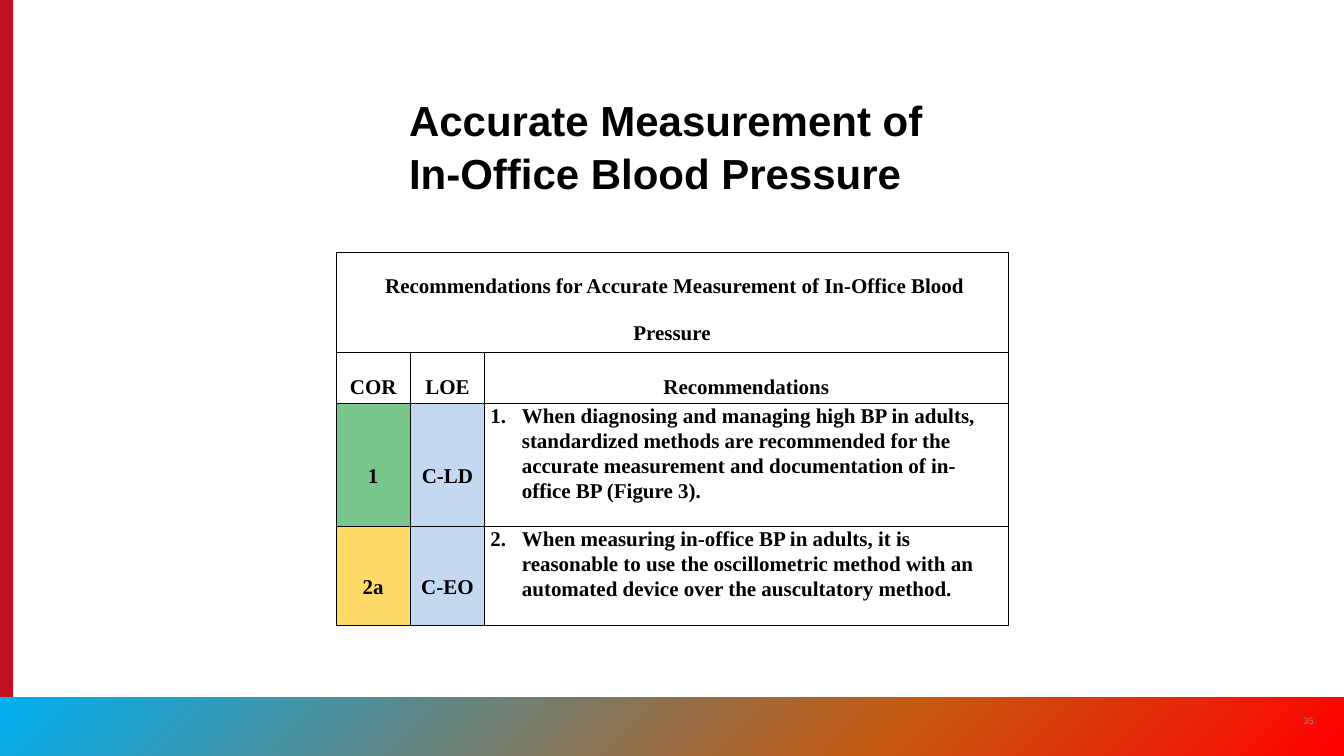
import copy

import pptx
import pptx.dml.color
import pptx.enum.shapes
import pptx.enum.text
import pptx.oxml
import pptx.oxml.ns
import pptx.util

Cm = pptx.util.Cm
Pt = pptx.util.Pt
ALIGN = pptx.enum.text.PP_ALIGN
ANCHOR = pptx.enum.text.MSO_ANCHOR
qn = pptx.oxml.ns.qn

WHITE, BLACK, LEVEL_BLUE = "FFFFFF", "000000", "C4D9F0"
HEADING = " Recommendations for Accurate Measurement of In-Office Blood Pressure"
COLUMN_HEADS = ("COR", "LOE", "Recommendations")
RECOMMENDATIONS = (
    ("1", "79C78D", "C-LD",
     "When diagnosing and managing high BP in adults, standardized methods are "
     "recommended for the accurate measurement and documentation of in-office BP "
     "(Figure 3)."),
    ("2a", "FFDA68", "C-EO",
     "When measuring in-office BP in adults, it is reasonable to use the "
     "oscillometric method with an automated device over the auscultatory method."),
)
COLUMN_WIDTHS = (2.25, 2.24, 15.83)
ROW_HEIGHTS = (2.8, 1.4, 3.73, 3)


def rgb(hex_color):
    return pptx.dml.color.RGBColor.from_string(hex_color)


def style(paragraph, size, font, color=BLACK, bold=True):
    paragraph.font.size = Pt(size)
    paragraph.font.name = font
    paragraph.font.bold = bold
    paragraph.font.color.rgb = rgb(color)


def add_band(slide, left, top, width, height):
    band = slide.shapes.add_shape(
        pptx.enum.shapes.MSO_SHAPE.RECTANGLE, Cm(left), Cm(top), Cm(width), Cm(height))
    band.shadow.inherit = False
    band.line.fill.background()
    return band


def fill_gradient(band, stops):
    band.fill.gradient()
    band.fill.gradient_angle = 315
    stop_list = band._element.spPr.find(".//" + qn("a:gsLst"))
    while len(stop_list) < len(stops):
        stop_list.append(copy.deepcopy(stop_list[0]))
    for stop, (position, color) in zip(band.fill.gradient_stops, stops):
        stop.position = position
        stop.color.rgb = rgb(color)


def add_text(slide, text, left, top, width, height, anchor):
    frame = slide.shapes.add_textbox(Cm(left), Cm(top), Cm(width), Cm(height)).text_frame
    frame.word_wrap = True
    frame.vertical_anchor = anchor
    paragraph = frame.paragraphs[0]
    paragraph.text = text
    return paragraph


def set_borders(cell):
    properties = cell._tc.get_or_add_tcPr()
    for side in ("lnL", "lnR", "lnT", "lnB"):
        properties.append(pptx.oxml.parse_xml(
            f'<a:{side} {pptx.oxml.ns.nsdecls("a")} w="{Pt(1)}">'
            f'<a:solidFill><a:srgbClr val="{BLACK}"/></a:solidFill></a:{side}>'))


def number_paragraph(paragraph, start):
    properties = paragraph._p.get_or_add_pPr()
    properties.set("marL", str(Cm(0.95)))
    properties.set("indent", str(Cm(-0.95)))
    properties.append(pptx.oxml.parse_xml(
        f'<a:buAutoNum {pptx.oxml.ns.nsdecls("a")} type="arabicPeriod" startAt="{start}"/>'))


def fill_cell(cell, text, color=WHITE, anchor=ANCHOR.TOP, number=None):
    cell.fill.solid()
    cell.fill.fore_color.rgb = rgb(color)
    cell.margin_left = cell.margin_right = Cm(0.18)
    cell.margin_top = cell.margin_bottom = 0
    cell.vertical_anchor = anchor
    paragraph = cell.text_frame.paragraphs[0]
    paragraph.text = text
    paragraph.space_after = Pt(8)
    if number is None:
        paragraph.alignment = ALIGN.CENTER
        paragraph.line_spacing = 2.0
    else:
        paragraph.line_spacing = 1.07
        number_paragraph(paragraph, number)
    style(paragraph, 18, "Times New Roman")


def add_recommendations(slide):
    table = slide.shapes.add_table(
        len(ROW_HEIGHTS), len(COLUMN_WIDTHS), Cm(10.16), Cm(7.62),
        Cm(sum(COLUMN_WIDTHS)), Cm(sum(ROW_HEIGHTS))).table
    table.first_row = table.horz_banding = False
    for column, width in zip(table.columns, COLUMN_WIDTHS):
        column.width = Cm(width)
    for row, height in zip(table.rows, ROW_HEIGHTS):
        row.height = Cm(height)
    for cell in table.iter_cells():
        set_borders(cell)
    table.cell(0, 0).merge(table.cell(0, 2))
    fill_cell(table.cell(0, 0), HEADING)
    for column, head in enumerate(COLUMN_HEADS):
        fill_cell(table.cell(1, column), head)
    for number, (cor, cor_color, loe, advice) in enumerate(RECOMMENDATIONS, 1):
        row = number + 1
        fill_cell(table.cell(row, 0), cor, cor_color, ANCHOR.MIDDLE)
        fill_cell(table.cell(row, 1), loe, LEVEL_BLUE, ANCHOR.MIDDLE)
        fill_cell(table.cell(row, 2), advice, number=number)


def main():
    presentation = pptx.Presentation()
    presentation.slide_width = Cm(40.64)
    presentation.slide_height = Cm(22.86)
    slide = presentation.slides.add_slide(presentation.slide_layouts[6])

    side_band = add_band(slide, 0, 0, 0.4, 22.86)
    side_band.fill.solid()
    side_band.fill.fore_color.rgb = rgb("C10E21")
    footer_band = add_band(slide, 0, 21.08, 40.64, 1.78)
    fill_gradient(footer_band, ((0, "00B0F0"), (0.66, "C55A11"), (1, "FF0000")))

    title = add_text(slide, "Accurate Measurement of In-Office Blood Pressure",
                     12.12, 2.74, 16.41, 3.38, ANCHOR.BOTTOM)
    title.line_spacing = 1.05
    style(title, 36, "Arial")
    add_recommendations(slide)
    page_number = add_text(slide, "35", 38.96, 21.18, 1.22, 1.22, ANCHOR.MIDDLE)
    page_number.alignment = ALIGN.CENTER
    style(page_number, 8, "Arial", "8A8B8A", False)

    presentation.save("out.pptx")


if __name__ == "__main__":
    main()
